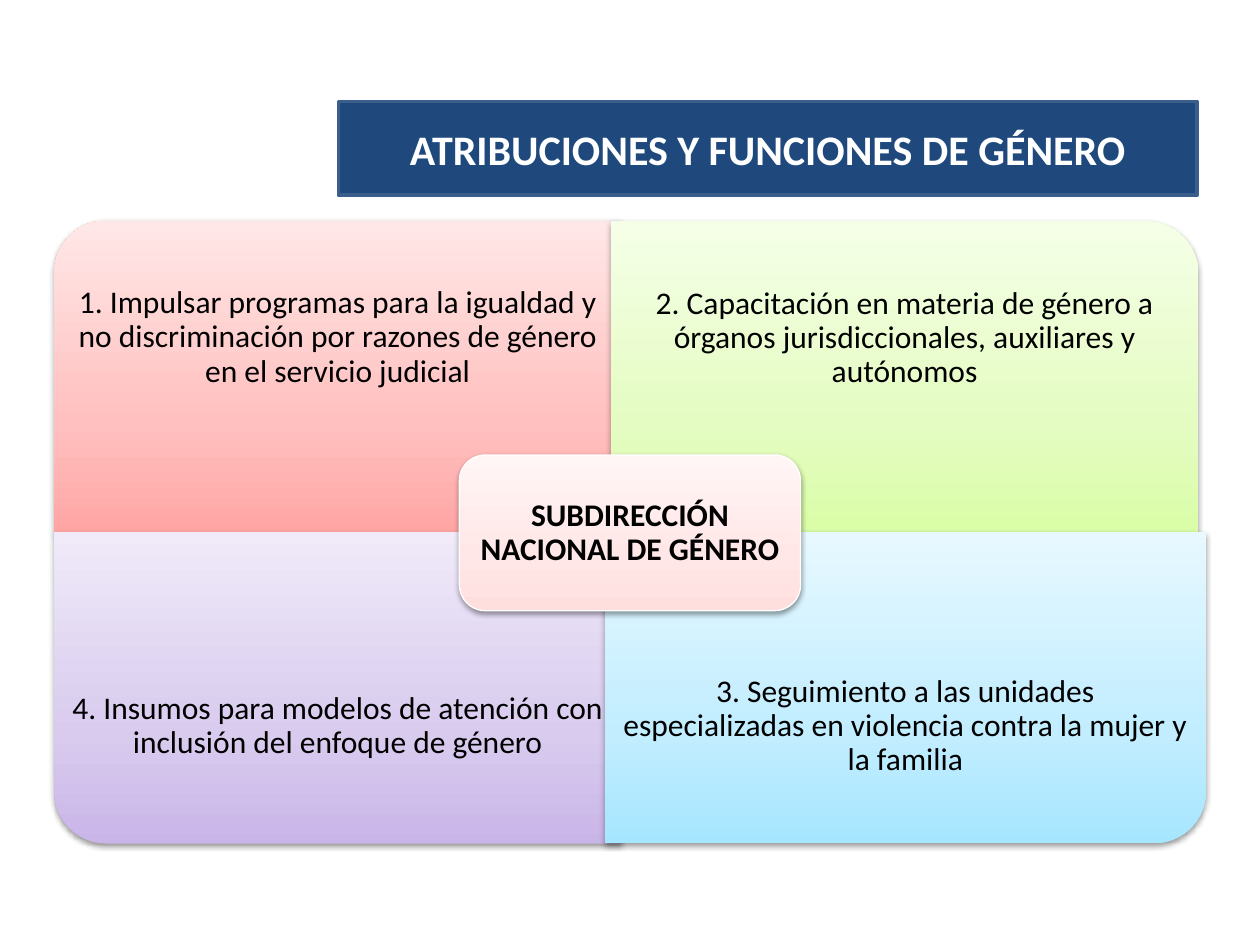
"""Build the slide on gender duties: a title bar and four panels around a core."""
from dataclasses import dataclass

from lxml.etree import SubElement
from pptx import Presentation
from pptx.dml.color import RGBColor
from pptx.enum.shapes import MSO_SHAPE as Preset
from pptx.enum.text import MSO_ANCHOR as Anchor, PP_ALIGN as Align
from pptx.oxml.ns import qn
from pptx.util import Pt

FONT = "Calibri"
PANEL_HEIGHT = 178
TEXT_HEIGHT = 134
TEXT_INSET = 10


@dataclass(frozen=True)
class Panel:
    text: str
    left: float
    top: float
    width: float
    turn: int
    shades: tuple[str, str, str]

    @property
    def text_top(self) -> float:
        lower = self.turn in (90, 180)
        return self.top + (PANEL_HEIGHT - TEXT_HEIGHT if lower else 0)


PANELS = (
    Panel("1. Impulsar programas para la igualdad y no discriminación por razones "
          "de género en el servicio judicial",
          31, 126, 324, 270, ("FFA6A5", "FFC0BF", "FFE7E7")),
    Panel("2. Capacitación en materia de género a órganos jurisdiccionales, "
          "auxiliares y autónomos",
          349.2, 126.5, 335.5, 0, ("DAFDA7", "E4FCC2", "F5FFE7")),
    Panel("4. Insumos para modelos de atención con inclusión del enfoque de género",
          31, 304, 324, 180, ("C9B5E8", "D8CBEE", "F0EAF9")),
    Panel("3. Seguimiento a las unidades especializadas en violencia contra la "
          "mujer y la familia",
          345.6, 304, 343.5, 90, ("A7E6FF", "C1EDFF", "E7F8FF")),
)


def colour(code: str) -> RGBColor:
    return RGBColor.from_string(code)


def add_element(parent, tag: str, **values):
    return SubElement(parent, qn(tag), {key: str(value) for key, value in values.items()})


def add_shape(page, preset, left: float, top: float, width: float, height: float):
    shape = page.shapes.add_shape(preset, Pt(left), Pt(top), Pt(width), Pt(height))
    shape.shadow.inherit = False
    shape.line.fill.background()
    return shape


def shade(shape, shades: tuple[str, str, str]) -> None:
    """Give the shape an upright three-stop gradient and a soft shadow."""
    shape.fill.gradient()
    properties = shape._element.spPr
    gradient = properties.find(qn("a:gradFill"))
    gradient.clear()
    gradient.set("rotWithShape", "0")
    stops = add_element(gradient, "a:gsLst")
    for position, code in zip((0, 35, 100), shades):
        stop = add_element(stops, "a:gs", pos=position * 1000)
        add_element(stop, "a:srgbClr", val=code)
    add_element(gradient, "a:lin", ang=270 * 60000, scaled=0)
    effects = properties.find(qn("a:effectLst"))
    shadow = add_element(effects, "a:outerShdw", blurRad=int(Pt(3.1)), dist=int(Pt(1.6)),
                         dir=90 * 60000, rotWithShape=0)
    black = add_element(shadow, "a:srgbClr", val="000000")
    add_element(black, "a:alpha", val=38000)


def write(shape, text: str, size: float, code: str, bold: bool = False,
          inset: float = 5, spacing: float = 1.0) -> None:
    frame = shape.text_frame
    frame.text = text
    frame.word_wrap = True
    frame.vertical_anchor = Anchor.MIDDLE
    frame.margin_left = frame.margin_right = Pt(inset)
    frame.margin_top = frame.margin_bottom = Pt(inset)
    para = frame.paragraphs[0]
    para.alignment = Align.CENTER
    para.line_spacing = spacing
    for span in para.runs:
        span.font.name = FONT
        span.font.size = Pt(size)
        span.font.bold = bold
        span.font.color.rgb = colour(code)


def draw_title(page) -> None:
    bar = add_shape(page, Preset.RECTANGLE, 193.5, 58, 490.5, 53.5)
    bar.fill.solid()
    bar.fill.fore_color.rgb = colour("1F497D")
    bar.line.color.rgb = colour("3A5F8C")
    bar.line.width = Pt(2)
    write(bar, "ATRIBUCIONES Y FUNCIONES DE GÉNERO", 24, "FFFFFF", bold=True)


def draw_panel(page, panel: Panel) -> None:
    """Draw a panel whose frame is turned about its centre, with level text."""
    width, height = panel.width, PANEL_HEIGHT
    if panel.turn % 180:
        width, height = height, width
    left = panel.left + (panel.width - width) / 2
    top = panel.top + (PANEL_HEIGHT - height) / 2
    shape = add_shape(page, Preset.ROUND_1_RECTANGLE, left, top, width, height)
    shape.rotation = panel.turn
    shade(shape, panel.shades)
    box = page.shapes.add_textbox(Pt(panel.left), Pt(panel.text_top),
                                  Pt(panel.width), Pt(TEXT_HEIGHT))
    write(box, panel.text, 18, "000000", inset=TEXT_INSET, spacing=0.9)


def draw_core(page) -> None:
    core = add_shape(page, Preset.ROUNDED_RECTANGLE, 262.5, 260, 195, 89)
    shade(core, ("FFDFDE", "FFE7E7", "FFF6F5"))
    core.line.color.rgb = colour("FFFFFF")
    core.line.width = Pt(0.75)
    write(core, "SUBDIRECCIÓN NACIONAL DE GÉNERO", 18, "000000", bold=True, spacing=0.9)


def main() -> None:
    deck = Presentation()
    deck.slide_width, deck.slide_height = Pt(720), Pt(540)
    page = deck.slides.add_slide(deck.slide_layouts[6])
    draw_title(page)
    for panel in PANELS:
        draw_panel(page, panel)
    draw_core(page)
    deck.save("out.pptx")


if __name__ == "__main__":
    main()
